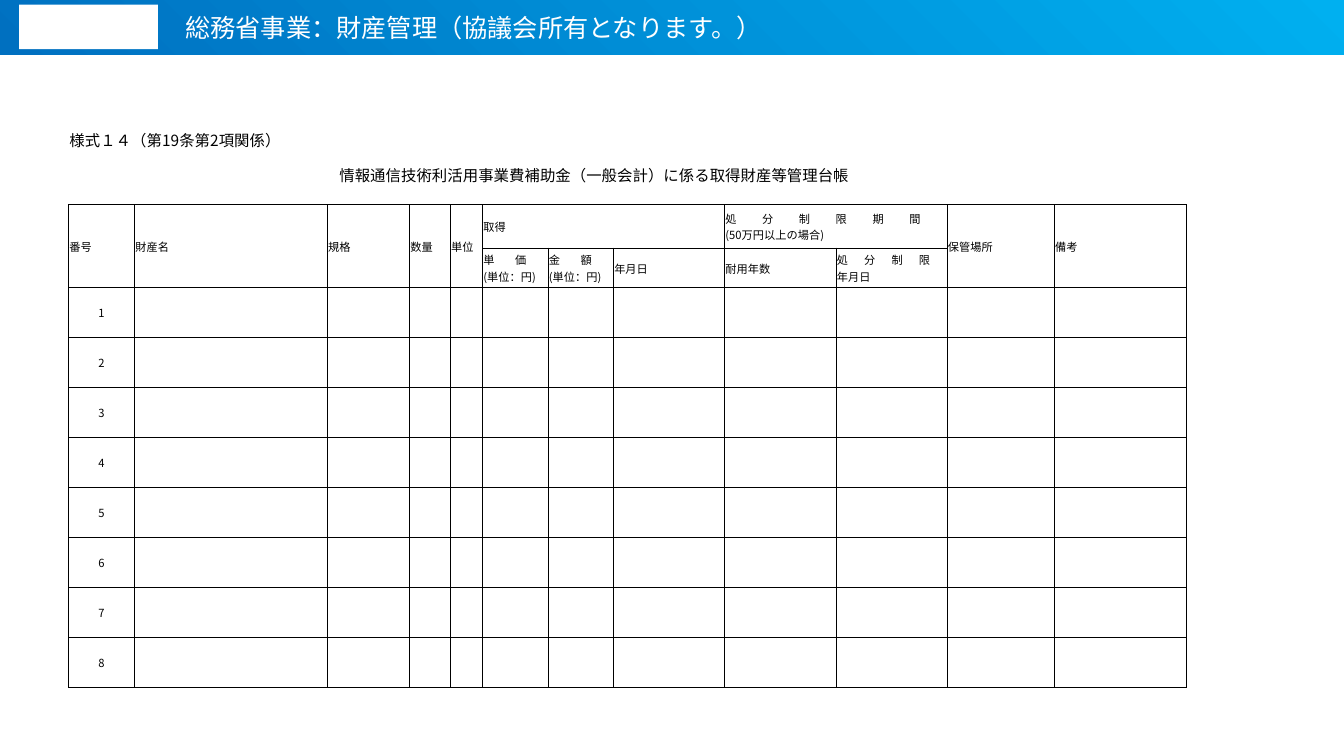
from dataclasses import dataclass

from lxml import etree
from pptx import Presentation
from pptx import util as u
from pptx.dml.color import RGBColor
from pptx.enum import shapes, text
from pptx.oxml import ns

FONT = "Noto Sans CJK JP"
BLACK, WHITE = "000000", "FFFFFF"
LIGHT_BLUE, DARK_BLUE = "00B0F0", "0070C0"
NO_GRID_STYLE = "{2D5ABB26-0587-4C30-8999-92F81FD0307C}"
LEFT, CENTER, JUSTIFY = text.PP_ALIGN.LEFT, text.PP_ALIGN.CENTER, text.PP_ALIGN.JUSTIFY

COLUMN_WIDTHS = [1.66, 4.86, 2.07, 1.03, 0.81, 1.65, 1.65, 2.8, 2.81, 2.8, 2.7, 3.33]
ITEM_COUNT = 8
HEADER_ROW = 3
FIRST_ITEM_ROW = 5
ROW_HEIGHTS = [0.99, 0.74, 0.41, 1.09, 0.99] + [1.26] * ITEM_COUNT


@dataclass
class Entry:
    row: int
    column: int
    wording: str
    rows: int = 1
    columns: int = 1
    align: text.PP_ALIGN = JUSTIFY
    size: float = 8


ENTRIES = [
    Entry(0, 0, "様式１４（第19条第2項関係）", columns=4, align=LEFT, size=11),
    Entry(1, 1, "情報通信技術利活用事業費補助金（一般会計）に係る取得財産等管理台帳",
          columns=10, align=CENTER, size=11),
    Entry(3, 5, "取得", columns=3),
    Entry(3, 8, "処分制限期間\v(50万円以上の場合)", columns=2),
    Entry(4, 5, "単価\v(単位：円)"),
    Entry(4, 6, "金額\v(単位：円)"),
    Entry(4, 7, "年月日"),
    Entry(4, 8, "耐用年数"),
    Entry(4, 9, "処分制限\v年月日"),
]
TALL_HEADERS = {0: "番号", 1: "財産名", 2: "規格", 3: "数量", 4: "単位",
                10: "保管場所", 11: "備考"}
ENTRIES += [Entry(HEADER_ROW, column, wording, rows=2)
            for column, wording in TALL_HEADERS.items()]
ENTRIES += [Entry(FIRST_ITEM_ROW + index, 0, str(index + 1), align=CENTER)
            for index in range(ITEM_COUNT)]


def rgb(value: str) -> RGBColor:
    return RGBColor.from_string(value)


def set_font(para, size: float, color: str) -> None:
    para.font.size = u.Pt(size)
    para.font.color.rgb = rgb(color)
    para.font.name = FONT
    defaults = para._p.pPr.find(ns.qn("a:defRPr"))
    etree.SubElement(defaults, ns.qn("a:ea"), typeface=FONT)


def add_bar(page, left: float, top: float, width: float, height: float):
    bar = page.shapes.add_shape(shapes.MSO_SHAPE.RECTANGLE,
                                u.Cm(left), u.Cm(top), u.Cm(width), u.Cm(height))
    bar.shadow.inherit = False
    bar.line.fill.background()
    return bar


def add_banner(page) -> None:
    band = add_bar(page, 0, 0, 33.87, 1.38)
    band.fill.gradient()
    band.fill.gradient_angle = 225
    for stop, color in zip(band.fill.gradient_stops, (LIGHT_BLUE, DARK_BLUE)):
        stop.color.rgb = rgb(color)

    plate = add_bar(page, 0.48, 0.12, 3.5, 1.12)
    plate.fill.solid()
    plate.fill.fore_color.rgb = rgb(WHITE)


def add_title(page) -> None:
    box = page.shapes.add_textbox(u.Cm(4.42), u.Cm(0.18), u.Cm(15.95), u.Cm(1.03))
    box.text_frame.word_wrap = True
    para = box.text_frame.paragraphs[0]
    para.text = "総務省事業：財産管理（協議会所有となります。）"
    set_font(para, 18, WHITE)


def add_border(cell, side: str) -> None:
    line = etree.SubElement(cell._tc.get_or_add_tcPr(), ns.qn(f"a:ln{side}"),
                            w=str(u.Pt(0.5)))
    fill = etree.SubElement(line, ns.qn("a:solidFill"))
    etree.SubElement(fill, ns.qn("a:srgbClr"), val=BLACK)


def prepare_cell(cell, row: int) -> None:
    cell.margin_left = cell.margin_right = cell.margin_top = u.Cm(0.02)
    cell.margin_bottom = 0
    cell.vertical_anchor = text.MSO_ANCHOR.MIDDLE
    # Only the ledger below the headings is ruled
    sides = "LRTB" if row >= HEADER_ROW else "B" if row == HEADER_ROW - 1 else ""
    for side in sides:
        add_border(cell, side)
    cell.fill.background()


def fill_cell(table, entry: Entry) -> None:
    cell = table.cell(entry.row, entry.column)
    if entry.rows * entry.columns > 1:
        cell.merge(table.cell(entry.row + entry.rows - 1,
                              entry.column + entry.columns - 1))
    para = cell.text_frame.paragraphs[0]
    para.text = entry.wording
    para.alignment = entry.align
    set_font(para, entry.size, BLACK)


def add_ledger(page) -> None:
    frame = page.shapes.add_table(len(ROW_HEIGHTS), len(COLUMN_WIDTHS),
                                  u.Cm(1.73), u.Cm(3.02),
                                  u.Cm(sum(COLUMN_WIDTHS)), u.Cm(sum(ROW_HEIGHTS)))
    table = frame.table
    table.first_row = table.horz_banding = False
    table._tbl.tblPr.find(ns.qn("a:tableStyleId")).text = NO_GRID_STYLE
    for column, width in zip(table.columns, COLUMN_WIDTHS):
        column.width = u.Cm(width)
    for index, height in enumerate(ROW_HEIGHTS):
        table.rows[index].height = u.Cm(height)
        for cell in table.rows[index].cells:
            prepare_cell(cell, index)

    for entry in ENTRIES:
        fill_cell(table, entry)

    # Small type keeps empty cells from stretching their rows
    for cell in table.iter_cells():
        if not cell.text_frame.text:
            etree.SubElement(cell.text_frame.paragraphs[0]._p,
                             ns.qn("a:endParaRPr"), sz="800")


def main() -> None:
    deck = Presentation()
    deck.slide_width, deck.slide_height = u.Cm(33.87), u.Cm(19.05)
    page = deck.slides.add_slide(deck.slide_layouts[6])
    add_banner(page)
    add_ledger(page)
    add_title(page)
    deck.save("out.pptx")


if __name__ == "__main__":
    main()
